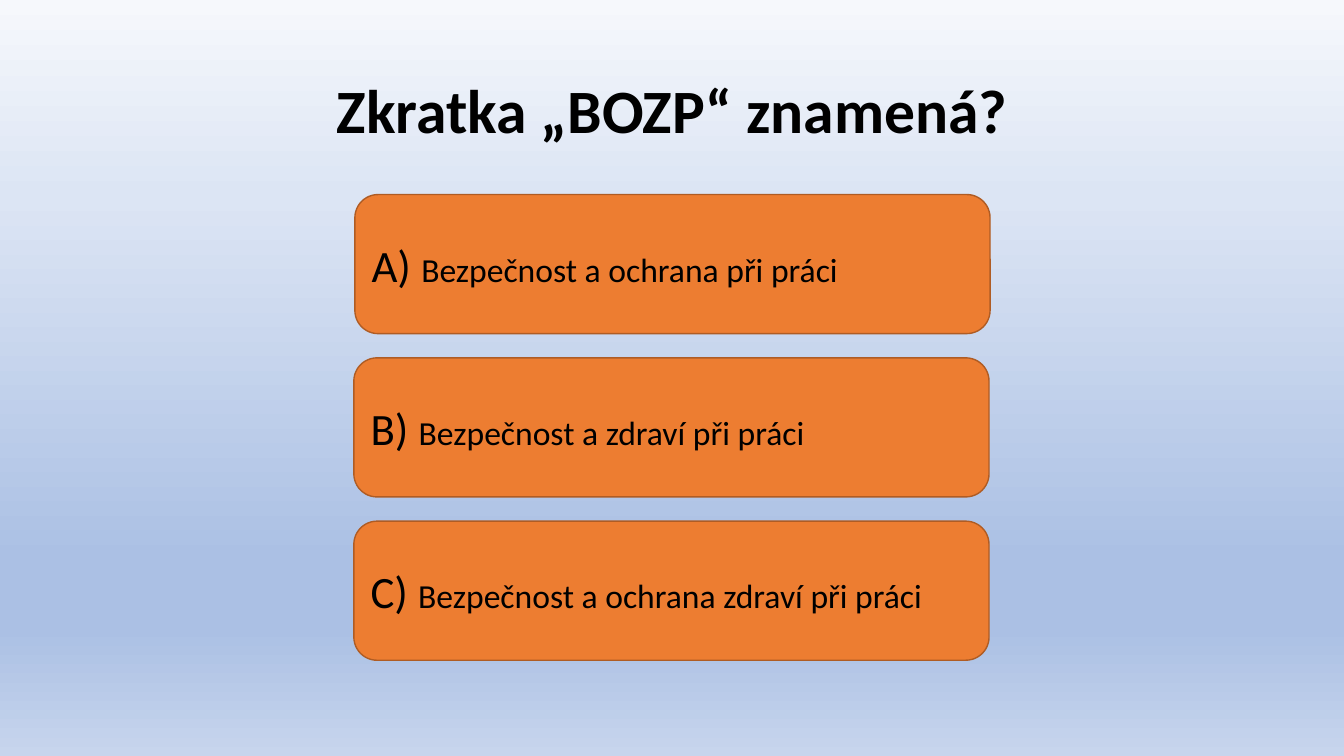
from dataclasses import dataclass

from lxml import etree
from pptx import Presentation
from pptx import util as u
from pptx.dml.color import RGBColor
from pptx.enum import shapes, text
from pptx.oxml import ns


@dataclass(frozen=True)
class Theme:
    font: str = "Calibri"
    ink: str = "000000"
    card: str = "ED7D31"
    edge: str = "AF5C24"
    sky: tuple = ((0, "F6F8FC"), (26, "DCE5F4"), (74, "ABC0E4"),
                  (83, "ABC0E4"), (100, "C7D5ED"))
    head: int = 44
    mark: int = 32
    body: int = 24


class Quiz:
    """Draws a quiz question and its answer cards on one slide."""

    def __init__(self, deck, theme):
        self.theme = theme
        self.slide = deck.slides.add_slide(deck.slide_layouts[6])

    def sky(self):
        fill = self.slide.background.fill
        fill.gradient()
        fill.gradient_angle = 270
        stops = self.slide.element.find(".//" + ns.qn("a:gsLst"))
        for old in list(stops):
            stops.remove(old)
        for pos, tint in self.theme.sky:
            stop = etree.SubElement(stops, ns.qn("a:gs"), pos=str(pos * 1000))
            etree.SubElement(stop, ns.qn("a:srgbClr"), val=tint)

    def label(self, shape, runs, align, bold=False):
        frame = shape.text_frame
        frame.word_wrap = True
        frame.vertical_anchor = text.MSO_ANCHOR.MIDDLE
        para = frame.paragraphs[0]
        para.alignment = align
        for words, size in runs:
            run = para.add_run()
            run.text = words
            run.font.name = self.theme.font
            run.font.size = u.Pt(size)
            run.font.bold = bold
            run.font.color.rgb = RGBColor.from_string(self.theme.ink)
        return para

    def title(self, words, *box):
        shape = self.slide.shapes.add_textbox(*map(u.Inches, box))
        para = self.label(shape, [(words, self.theme.head)],
                          text.PP_ALIGN.CENTER, bold=True)
        para.line_spacing = 0.9

    def card(self, mark, words, *box):
        shape = self.slide.shapes.add_shape(
            shapes.MSO_SHAPE.ROUNDED_RECTANGLE, *map(u.Inches, box))
        shape.shadow.inherit = False
        shape.fill.solid()
        shape.fill.fore_color.rgb = RGBColor.from_string(self.theme.card)
        shape.line.color.rgb = RGBColor.from_string(self.theme.edge)
        shape.line.width = u.Pt(1)
        runs = [(f"{mark}) ", self.theme.mark), (words, self.theme.body)]
        self.label(shape, runs, text.PP_ALIGN.LEFT)


def main():
    deck = Presentation()
    deck.slide_width, deck.slide_height = u.Inches(13.33), u.Inches(7.5)
    quiz = Quiz(deck, Theme())
    quiz.sky()
    quiz.title("Zkratka „BOZP“ znamená?", 0.92, 0.4, 11.5, 1.45)
    cards = (
        ("A", "Bezpečnost a ochrana při práci", 3.52),
        ("B", "Bezpečnost a zdraví při práci", 3.51),
        ("C", "Bezpečnost a ochrana zdraví při práci", 3.51),
    )
    for row, (mark, words, left) in enumerate(cards):
        quiz.card(mark, words, left, 1.93 + 1.62 * row, 6.3, 1.38)
    deck.save("out.pptx")


if __name__ == "__main__":
    main()
